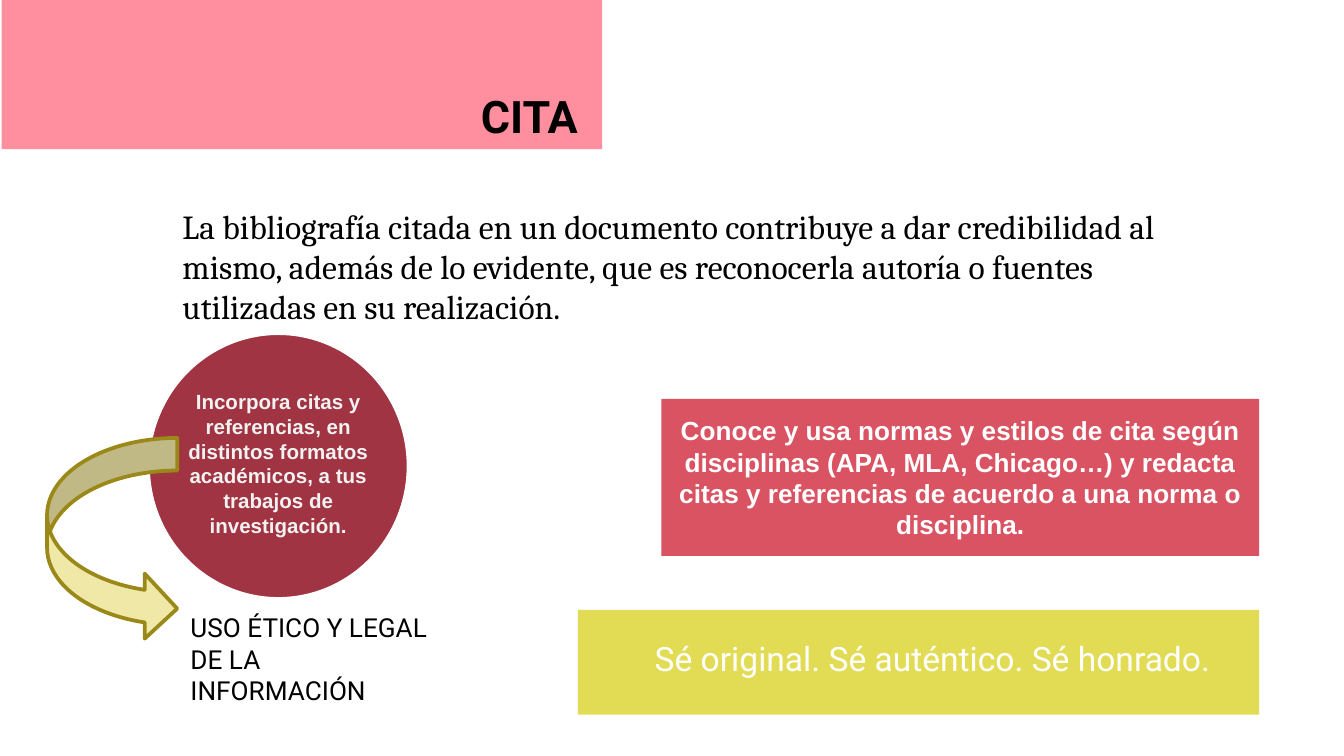
import pptx
import pptx.util
import pptx.dml.color
import pptx.enum.shapes
import pptx.enum.text

Cm = pptx.util.Cm
Pt = pptx.util.Pt
KIND = pptx.enum.shapes.MSO_SHAPE
ALIGN = pptx.enum.text.PP_ALIGN
ANCHOR = pptx.enum.text.MSO_ANCHOR

COLORS = {
    "pink": "FF8E9E",
    "red": "D95362",
    "wine": "A13442",
    "yellow": "E2DC55",
    "cream": "F0E8A7",
    "olive": "9A8919",
    "white": "FFFFFF",
    "pale": "F2F2F2",
    "black": "000000",
}


def color(name):
    return pptx.dml.color.RGBColor.from_string(COLORS[name])


def add_form(slide, kind, box, fill, line=None, width=0.75):
    form = slide.shapes.add_shape(kind, *map(Cm, box))
    form.shadow.inherit = False
    form.fill.solid()
    form.fill.fore_color.rgb = color(fill)
    if line:
        form.line.color.rgb = color(line)
        form.line.width = Pt(width)
    else:
        form.line.fill.background()
    return form


def write(form, text, font, size, ink, bold=False, align=ALIGN.LEFT,
          anchor=ANCHOR.TOP, pad=0.25):
    frame = form.text_frame
    frame.word_wrap = True
    frame.vertical_anchor = anchor
    frame.margin_left = frame.margin_right = Cm(0.25)
    frame.margin_top = frame.margin_bottom = Cm(pad)
    para = frame.paragraphs[0]
    para.alignment = align
    run = para.add_run()
    run.text = text
    run.font.name = font
    run.font.size = Pt(size)
    run.font.bold = bold
    run.font.color.rgb = color(ink)


def add_text(slide, box, *words, **style):
    label = slide.shapes.add_textbox(*map(Cm, box))
    write(label, *words, **style)


def main():
    deck = pptx.Presentation()
    deck.slide_width = Cm(25.4)
    deck.slide_height = Cm(14.29)
    slide = deck.slides.add_slide(deck.slide_layouts[6])

    add_form(slide, KIND.RECTANGLE, (0.03, 0, 11.35, 2.82), "pink")
    add_text(slide, (1.9, 1.42, 9.27, 1.19), "CITA", "Roboto", 24, "black",
             bold=True, align=ALIGN.RIGHT)

    norms = add_form(slide, KIND.RECTANGLE, (12.5, 7.54, 11.3, 2.97), "red")
    write(norms,
          "Conoce y usa normas y estilos de cita según disciplinas "
          "(APA, MLA, Chicago…) y redacta citas y referencias de acuerdo "
          "a una norma o disciplina.",
          "Arial", 14, "white", bold=True, align=ALIGN.CENTER,
          anchor=ANCHOR.MIDDLE)

    add_form(slide, KIND.OVAL, (2.82, 6.32, 4.88, 4.98), "wine", "white")
    add_text(slide, (2.82, 7.11, 4.88, 4.39),
             "Incorpora citas y referencias, en distintos formatos "
             "académicos, a tus trabajos de investigación.",
             "Arial", 11, "pale", bold=True, align=ALIGN.CENTER)

    add_text(slide, (3.2, 3.76, 19.51, 2.57),
             "La bibliografía citada en un documento contribuye a dar "
             "credibilidad al mismo, además de lo evidente, que es "
             "reconocerla autoría o fuentes utilizadas en su realización.",
             "Cambria", 18, "black", pad=0.13)

    add_form(slide, KIND.RECTANGLE, (10.92, 11.53, 12.88, 1.98), "yellow")
    add_text(slide, (11.73, 11.81, 11.79, 1.7),
             "Sé original. Sé auténtico. Sé honrado.",
             "Roboto", 18, "white", align=ALIGN.CENTER)

    add_text(slide, (3.35, 11.43, 5.11, 1.45),
             "USO ÉTICO Y LEGAL DE LA INFORMACIÓN",
             "Roboto", 14, "black", pad=0.13)
    add_form(slide, KIND.CURVED_RIGHT_ARROW, (0.89, 8.28, 2.46, 3.84),
             "cream", "olive", 2)

    deck.save("out.pptx")


if __name__ == "__main__":
    main()
